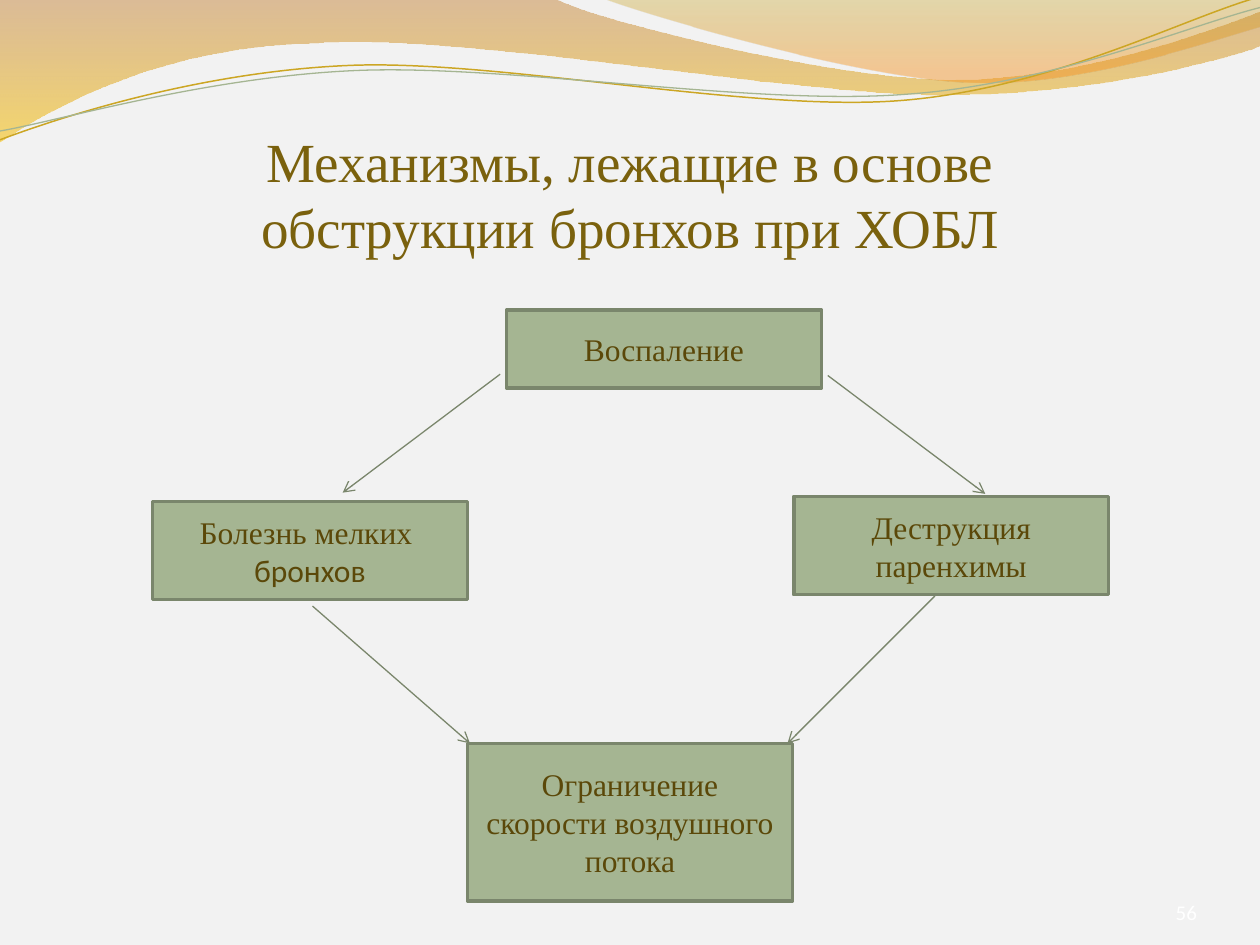
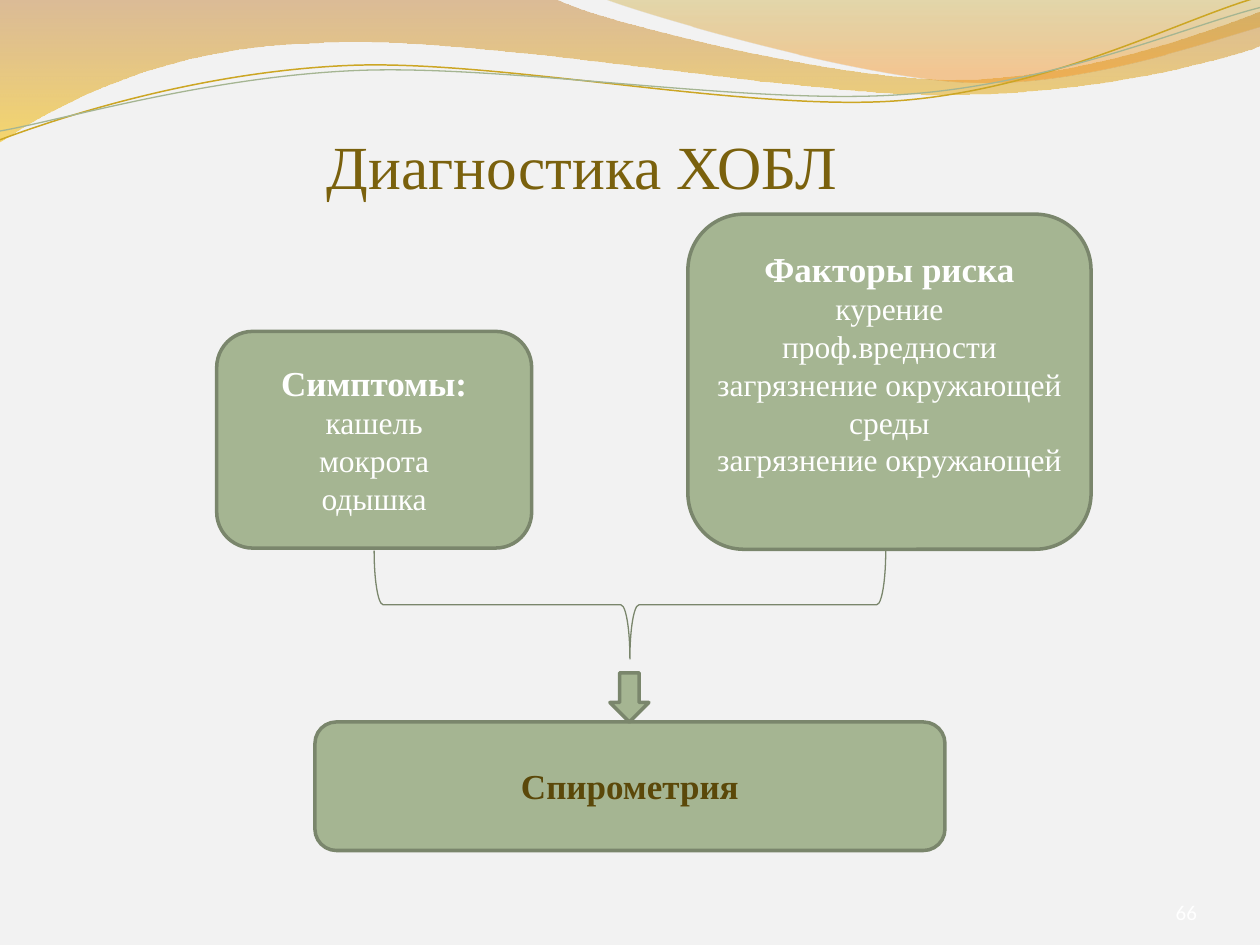
from copy import deepcopy
from dataclasses import dataclass

from lxml.etree import SubElement
from pptx import Presentation
from pptx.dml.color import RGBColor
from pptx.enum.shapes import MSO_CONNECTOR, MSO_SHAPE, PP_PLACEHOLDER
from pptx.enum.text import MSO_ANCHOR, MSO_AUTO_SIZE, PP_ALIGN
from pptx.oxml.ns import qn
from pptx.util import Inches, Pt

BACKGROUND = RGBColor(0xF2, 0xF2, 0xF2)
SAGE = RGBColor(0xA5, 0xB5, 0x92)
SAGE_DARK = RGBColor(0x7A, 0x86, 0x6C)
GOLD = RGBColor(0xCC, 0xA6, 0x24)
TITLE_BROWN = RGBColor(0x7A, 0x61, 0x0D)
TEXT_BROWN = RGBColor(0x5B, 0x48, 0x09)
WHITE = RGBColor(0xFF, 0xFF, 0xFF)
COPPER = RGBColor(0xC0, 0x7A, 0x28)
AMBER = RGBColor(0xF7, 0xBF, 0x00)
OLIVE = RGBColor(0xC0, 0x97, 0x09)
ORANGE = RGBColor(0xF5, 0x93, 0x20)

SERIF = "Times New Roman"
SANS = "Calibri"

LEFT_WAVE = [
    (0, 0), [(4.4, -0.01)],
    [(4.76, 0.17), (6.64, 0.63), (7.58, 0.63)],
    [(8.53, 0.63), (9.58, 0.26), (10, 0.09)],
    [(10.01, 0.36)],
    [(9.83, 0.44), (8.7, 0.76), (7.46, 0.75)],
    [(6.22, 0.75), (3.82, 0.28), (2.57, 0.34)],
    [(1.29, 0.36), (0.46, 0.83), (-0.01, 1.13)],
    [(0, 0)],
]
RIGHT_WAVE = [
    (4.79, -0.01),
    [(5.09, 0.11), (6.82, 0.62), (7.69, 0.65)],
    [(8.56, 0.69), (9.61, 0.32), (10, 0.21)],
    [(10, 0)], [(4.79, -0.01)],
]
GOLD_CURVE = [
    (0, 1.11),
    [(0.48, 0.93), (1.58, 0.57), (2.77, 0.52)],
    [(3.95, 0.47), (5.93, 0.89), (7.13, 0.8)],
    [(8.33, 0.71), (9.38, 0.15), (9.98, -0.02)],
]
SAGE_CURVE = [
    (0, 1.04),
    [(0.47, 0.96), (1.64, 0.61), (2.83, 0.56)],
    [(4.03, 0.51), (5.97, 0.84), (7.17, 0.75)],
    [(8.36, 0.67), (9.41, 0.21), (10, 0.06)],
]


@dataclass
class Box:
    """A rectangle in inches."""
    left: float
    top: float
    width: float
    height: float

    def inner(self, left, top, width, height):
        """Return a box placed relative to this one."""
        return Box(self.left + left, self.top + top, width, height)

    def point(self, x, y):
        """Return a point placed relative to this box."""
        return Inches(self.left + x), Inches(self.top + y)

    def place(self, shape):
        """Move and size a shape to this box."""
        shape.left, shape.top, shape.width, shape.height = self.lengths()

    def lengths(self):
        """Return left, top, width and height as lengths."""
        return [Inches(value) for value in (self.left, self.top, self.width, self.height)]


def write_text(paragraph, text, *, size=18, font=SERIF, color=TEXT_BROWN, bold=False,
               align=PP_ALIGN.CENTER):
    """Fill a paragraph with formatted text."""
    paragraph.text = text
    paragraph.alignment = align
    for run in paragraph.runs:
        run.font.size = Pt(size)
        run.font.name = font
        run.font.bold = bold
        run.font.color.rgb = color


def write_lines(frame, lines, **text_format):
    """Write each (text, own format) pair as a paragraph."""
    for index, (text, own_format) in enumerate(lines):
        paragraph = frame.add_paragraph() if index else frame.paragraphs[0]
        write_text(paragraph, text, **{**text_format, **own_format})


def style_line(shape, color=SAGE_DARK, width=0.75):
    """Set the colour and width of an outline."""
    shape.line.color.rgb = color
    shape.line.width = Pt(width)


def add_figure(slide, preset, box, filled=True):
    """Add a sage preset shape, or only its thin outline."""
    shape = slide.shapes.add_shape(preset, *box.lengths())
    shape.shadow.inherit = False
    if filled:
        shape.fill.solid()
        shape.fill.fore_color.rgb = SAGE
    else:
        shape.fill.background()
    style_line(shape, width=2 if filled else 0.75)
    return shape


def add_text_figure(slide, preset, box, lines, bottom_inset=0.05, **text_format):
    """Add a preset shape with centred text."""
    frame = add_figure(slide, preset, box).text_frame
    frame.word_wrap = True
    frame.vertical_anchor = MSO_ANCHOR.MIDDLE
    frame.margin_bottom = Inches(bottom_inset)
    write_lines(frame, lines, **text_format)


def add_arrow(slide, start, end):
    """Add a thin line with an open arrowhead at its end."""
    arrow = slide.shapes.add_connector(MSO_CONNECTOR.STRAIGHT, *start, *end)
    style_line(arrow)
    SubElement(arrow.line._get_or_add_ln(), qn("a:tailEnd"), type="arrow")
    SubElement(arrow._element.spPr, qn("a:effectLst"))


def add_outline(slide, box, outline, close):
    """Add a freeform whose three-point segments are Bezier curves."""
    start, *segments = outline
    builder = slide.shapes.build_freeform(*box.point(*start), scale=1.0)
    points = [box.point(*point) for segment in segments for point in segment]
    builder.add_line_segments(points, close=close)
    shape = builder.convert_to_shape()
    shape.shadow.inherit = False
    steps = iter(list(shape._element.spPr.iter(qn("a:lnTo"))))
    for segment in segments:
        first, *others = [next(steps) for _ in segment]
        if others:
            first.tag = qn("a:cubicBezTo")
            for step in others:
                first.append(step[0])
                step.getparent().remove(step)
    return shape


def add_wave(slide, box, outline, stops):
    """Add a wave with a translucent vertical gradient."""
    wave = add_outline(slide, box, outline, close=True)
    wave.line.fill.background()
    wave.fill.gradient()
    wave.fill.gradient_angle = 270
    for stop, (position, color, _) in zip(wave.fill.gradient_stops, stops):
        stop.position = position
        stop.color.rgb = color
    colors = wave._element.spPr.iter(qn("a:srgbClr"))
    for color, (_, _, opacity) in zip(list(colors), stops):
        SubElement(color, qn("a:alpha"), val=str(opacity * 1000))


def add_header(slide, box):
    """Draw the waves and thin curves along the top."""
    add_wave(slide, box, LEFT_WAVE, [(0, COPPER, 45), (1, AMBER, 55)])
    add_wave(slide, box, RIGHT_WAVE, [(0, OLIVE, 30), (0.8, ORANGE, 45)])
    for outline, color, width in ((GOLD_CURVE, GOLD, 0.85), (SAGE_CURVE, SAGE, 0.75)):
        curve = add_outline(slide, box, outline, close=False)
        curve.fill.background()
        style_line(curve, color, width)


def add_title(slide, box, text, size):
    """Place and format the title placeholder."""
    title = slide.shapes.title
    box.place(title)
    frame = title.text_frame
    frame.auto_size = MSO_AUTO_SIZE.NONE
    frame.word_wrap = True
    frame.vertical_anchor = MSO_ANCHOR.BOTTOM
    frame.margin_left = frame.margin_right = frame.margin_bottom = 0
    frame.margin_top = Inches(0.05)
    write_text(frame.paragraphs[0], text, size=size, color=TITLE_BROWN)


def add_page_number(slide, box, number):
    """Fill the layout's slide number placeholder."""
    source = next(shape for shape in slide.slide_layout.placeholders
                  if shape.placeholder_format.type == PP_PLACEHOLDER.SLIDE_NUMBER)
    slide.shapes._spTree.append(deepcopy(source._element))
    placeholder = slide.shapes[-1]
    box.place(placeholder)
    frame = placeholder.text_frame
    frame.margin_left = frame.margin_right = 0
    frame.vertical_anchor = MSO_ANCHOR.MIDDLE
    write_text(frame.paragraphs[0], number, size=12, font=SANS, color=WHITE,
               align=PP_ALIGN.RIGHT)


def add_slide(presentation, title, title_box, title_size, number):
    """Add a slide with the shared header, title and page number."""
    slide = presentation.slides.add_slide(presentation.slide_layouts[5])
    add_header(slide, Box(0, 0, 10, 1.13))
    add_title(slide, title_box, title, title_size)
    add_page_number(slide, Box(8.5, 7.04, 1, 0.4), number)
    return slide


def draw_mechanisms(slide, box):
    """Draw the chain from inflammation to airflow limitation."""
    stages = [
        ((2.81, 0, 2.5, 0.62), [("Воспаление", {})]),
        ((0, 1.52, 2.5, 0.78), [("Болезнь мелких ", {}), ("бронхов", {"font": SANS})]),
        ((5.09, 1.48, 2.5, 0.78), [("Деструкция паренхимы", {})]),
        ((2.5, 3.44, 2.58, 1.25), [("Ограничение скорости воздушного потока", {})]),
    ]
    for place, lines in stages:
        add_text_figure(slide, MSO_SHAPE.RECTANGLE, box.inner(*place), lines)
    arrows = [
        ((2.76, 0.51), (1.51, 1.45)),
        ((5.36, 0.52), (6.61, 1.46)),
        ((1.27, 2.35), (2.52, 3.44)),
        ((6.21, 2.27), (5.04, 3.44)),
    ]
    for start, end in arrows:
        add_arrow(slide, box.point(*start), box.point(*end))


def draw_diagnostics(slide, box):
    """Draw symptoms and risk factors leading to spirometry."""
    heading = {"size": 20, "bold": True}
    symptoms = ["кашель", "мокрота", "одышка"]
    risks = ["курение", "проф.вредности", "загрязнение окружающей", "среды",
             "загрязнение окружающей"]
    groups = [
        ((0, 0.93, 2.5, 1.72), "Симптомы:", symptoms, 0.06),
        ((3.74, 0, 3.2, 2.66), "Факторы риска", risks, 0.35),
    ]
    for place, title, items, bottom_inset in groups:
        lines = [(title, heading)] + [(item, {}) for item in items]
        add_text_figure(slide, MSO_SHAPE.ROUNDED_RECTANGLE, box.inner(*place), lines,
                        bottom_inset, color=WHITE)
    add_text_figure(slide, MSO_SHAPE.ROUNDED_RECTANGLE, box.inner(0.78, 4.03, 5, 1.02),
                    [("Спирометрия", heading)], 0.06)
    brace = add_figure(slide, MSO_SHAPE.LEFT_BRACE, box.inner(2.85, 1.07, 0.86, 4.06),
                       filled=False)
    brace.rotation = 270
    add_figure(slide, MSO_SHAPE.DOWN_ARROW, box.inner(3.12, 3.64, 0.31, 0.39))


def main():
    """Build and save the presentation."""
    presentation = Presentation()
    presentation.slide_width = Inches(10)
    presentation.slide_height = Inches(7.5)
    background = presentation.slide_master.background.fill
    background.solid()
    background.fore_color.rgb = BACKGROUND

    mechanisms = add_slide(presentation, "Механизмы, лежащие в основе\vобструкции бронхов при ХОБЛ",
                           Box(0.5, 0.86, 9, 1.2), 31.5, "56")
    draw_mechanisms(mechanisms, Box(1.21, 2.46, 7.59, 4.69))

    diagnostics = add_slide(presentation, "Диагностика ХОБЛ", Box(0.12, 0.69, 9, 0.91), 35, "66")
    draw_diagnostics(diagnostics, Box(1.72, 1.7, 6.94, 5.05))

    presentation.save("out.pptx")


if __name__ == "__main__":
    main()
